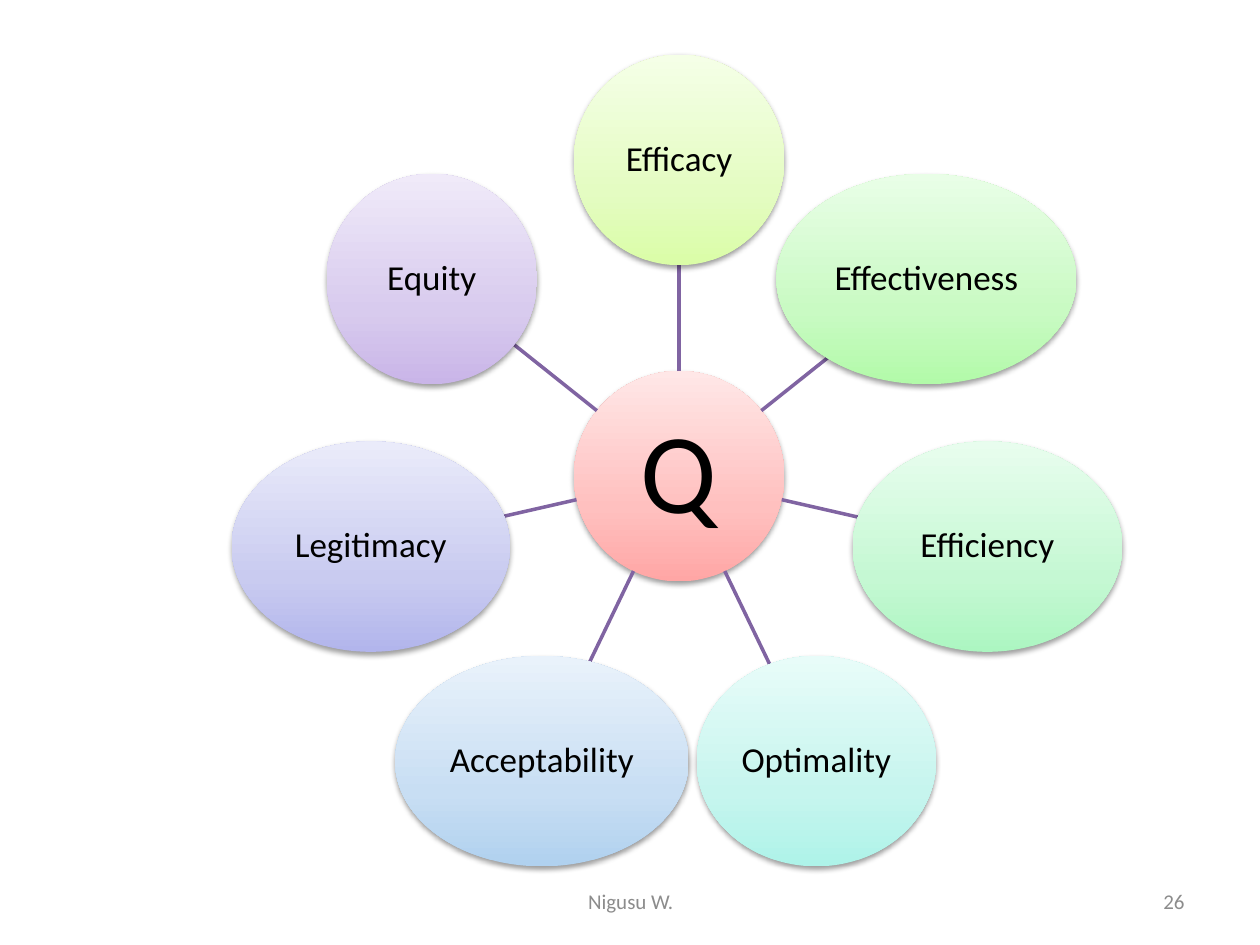
import copy
import math
from lxml import etree
from pptx import Presentation
from pptx.dml.color import RGBColor
from pptx.enum import shapes, text
from pptx.oxml import parse_xml
from pptx.oxml.ns import qn
from pptx.util import Inches, Pt

FONT = "Calibri"
HUB_X, HUB_Y = 5.39, 3.78
ORBIT = 2.51
DIAMETER = 1.67
HUB_COLORS = ("FFA6A5", "FFC0BF", "FFE7E7")
DIMENSIONS = [
    ("Efficacy", 1.67, ("DAFDA7", "E4FCC2", "F5FFE7")),
    ("Effectiveness", 2.38, ("B2FAA9", "C9FAC3", "E9FEE7")),
    ("Efficiency", 2.14, ("ACF6C1", "C5F8D3", "E8FDEE")),
    ("Optimality", 1.9, ("AEF3E9", "C6F5EE", "E8FCF9")),
    ("Acceptability", 2.33, ("B0D1EF", "C8DEF3", "E9F2FB")),
    ("Legitimacy", 2.21, ("B2B5EC", "C9CBF0", "EAEBFA")),
    ("Equity", 1.67, ("C9B5E8", "D8CBEE", "F0EAF9")),
]
SHADOW = (
    '<a:outerShdw xmlns:a="http://schemas.openxmlformats.org/drawingml/2006/main"'
    ' blurRad="40000" dist="20000" dir="5400000" rotWithShape="0">'
    '<a:srgbClr val="000000"><a:alpha val="38000"/></a:srgbClr></a:outerShdw>'
)


def rgb(value):
    return RGBColor.from_string(value)


def set_text(sp, content, size, color, align):
    tf = sp.text_frame
    tf.text = content
    tf.word_wrap = True
    tf.vertical_anchor = text.MSO_ANCHOR.MIDDLE
    p = tf.paragraphs[0]
    p.alignment = align
    font = p.runs[0].font
    font.name, font.size = FONT, Pt(size)
    font.color.rgb = rgb(color)
    return tf


def set_gradient(sp, colors):
    sp.fill.gradient()
    sp.fill.gradient_angle = 90
    first = sp._element.spPr.find(".//" + qn("a:gs"))
    first.addnext(copy.deepcopy(first))
    for stop, position, color in zip(sp.fill.gradient_stops, (0, 0.35, 1), colors):
        stop.position = position
        stop.color.rgb = rgb(color)


def add_bubble(s, label, x, y, width, colors, size=20, inset=0.01):
    sp = s.shapes.add_shape(
        shapes.MSO_SHAPE.OVAL, Inches(x - width / 2), Inches(y - DIAMETER / 2),
        Inches(width), Inches(DIAMETER))
    set_gradient(sp, colors)
    sp.line.fill.background()
    sp.shadow.inherit = False
    sp._element.spPr.find(qn("a:effectLst")).append(parse_xml(SHADOW))
    tf = set_text(sp, label, size, "000000", text.PP_ALIGN.CENTER)
    tf.margin_left = tf.margin_right = Inches(inset)
    tf.margin_top = tf.margin_bottom = Inches(inset)
    tf.paragraphs[0].line_spacing = 0.9


def add_spoke(s, dx, dy, width):
    start = DIAMETER / 2
    end = ORBIT - 1 / math.hypot(dx / (width / 2), dy / (DIAMETER / 2))
    line = s.shapes.add_connector(
        shapes.MSO_CONNECTOR.STRAIGHT,
        Inches(HUB_X + dx * start), Inches(HUB_Y + dy * start),
        Inches(HUB_X + dx * end), Inches(HUB_Y + dy * end))
    line.line.color.rgb = rgb("8064A2")
    line.line.width = Pt(2)
    etree.SubElement(line._element.spPr, qn("a:effectLst"))


def add_footer(s, content, left, width, align):
    sp = s.shapes.add_textbox(Inches(left), Inches(6.95), Inches(width), Inches(0.4))
    set_text(sp, content, 12, "8C8C8C", align)


def main():
    prs = Presentation()
    prs.slide_width, prs.slide_height = Inches(10), Inches(7.5)
    s = prs.slides.add_slide(prs.slide_layouts[6])
    add_bubble(s, "Q", HUB_X, HUB_Y, DIAMETER, HUB_COLORS, size=65, inset=0.05)
    for i, (label, width, colors) in enumerate(DIMENSIONS):
        angle = 2 * math.pi * i / len(DIMENSIONS)
        dx, dy = math.sin(angle), -math.cos(angle)
        add_spoke(s, dx, dy, width)
        add_bubble(s, label, HUB_X + ORBIT * dx, HUB_Y + ORBIT * dy, width, colors)
    add_footer(s, "Nigusu W.", 3.42, 3.17, text.PP_ALIGN.CENTER)
    add_footer(s, "26", 7.17, 2.33, text.PP_ALIGN.RIGHT)
    prs.save("out.pptx")


if __name__ == "__main__":
    main()
